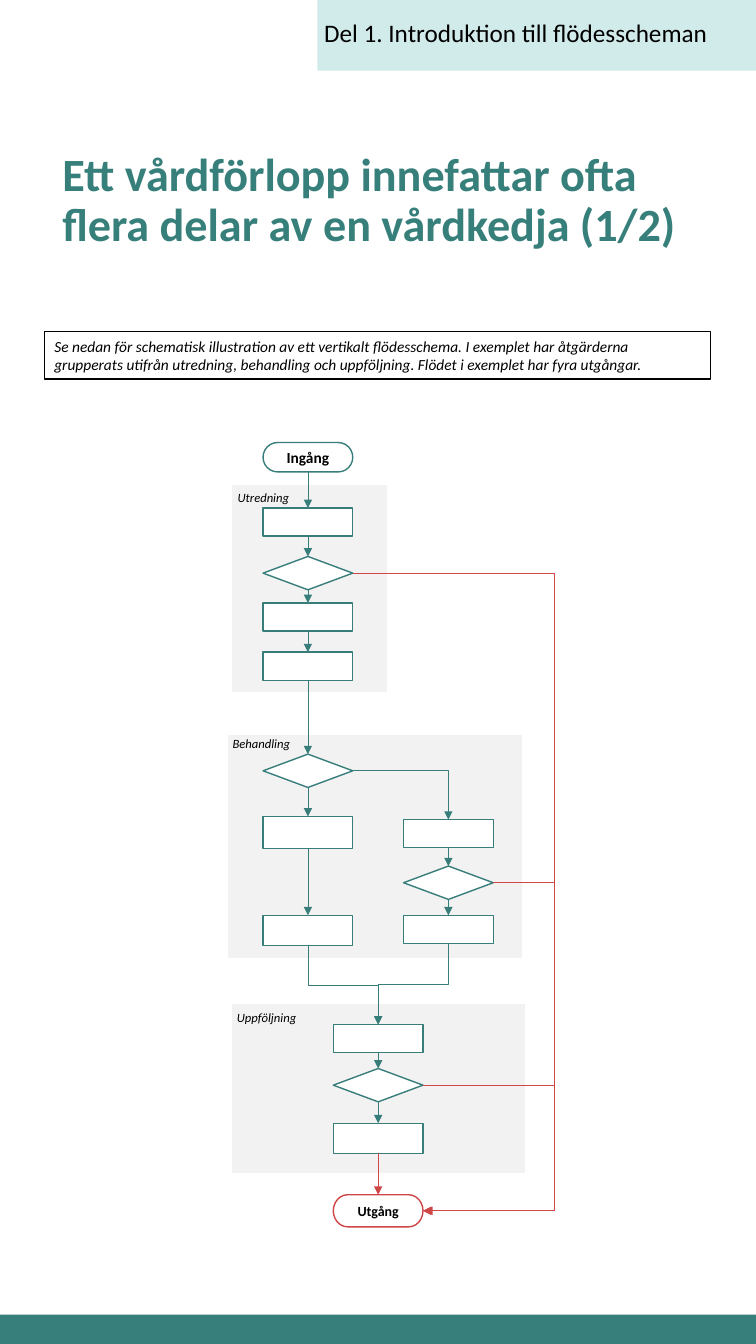
from dataclasses import dataclass

from lxml import etree
from pptx import Presentation
from pptx.dml.color import RGBColor
from pptx.enum.shapes import MSO_CONNECTOR, MSO_SHAPE
from pptx.enum.text import MSO_ANCHOR, MSO_AUTO_SIZE, PP_ALIGN
from pptx.oxml.ns import qn
from pptx.util import Cm, Pt

RECTANGLE = MSO_SHAPE.RECTANGLE
STEP = MSO_SHAPE.RECTANGLE
DECISION = MSO_SHAPE.FLOWCHART_DECISION
TERMINATOR = MSO_SHAPE.FLOWCHART_TERMINATOR
STRAIGHT = MSO_CONNECTOR.STRAIGHT
ELBOW = MSO_CONNECTOR.ELBOW
TOP, BOTTOM, RIGHT = 0, 2, 3  # connection sites


@dataclass(frozen=True)
class Theme:
    font: str = "Calibri"
    teal: str = "377F7A"
    flow: str = "377D7A"
    exit: str = "CF4646"
    mint: str = "D1EBEA"
    grey: str = "F2F2F2"
    white: str = "FFFFFF"
    black: str = "000000"
    title_size: float = 33
    header_size: float = 18
    body_size: float = 11
    exit_size: float = 10
    label_size: float = 9
    outline: float = 1
    thin: float = 0.75
    arrow: float = 0.5


THEME = Theme()

# Flowchart geometry in centimetres
NODE_WIDTH = 2.26
LEFT, SIDE = 7.76, 11.3
MIDDLE = (LEFT + SIDE) / 2
EXIT_RAIL = 13.97

# Group: left, top, width, height, label left, label top
GROUPS = {
    "Utredning": (5.84, 12.19, 3.94, 5.26, 5.74, 12.22),
    "Behandling": (5.74, 18.49, 7.44, 5.66, 5.61, 18.42),
    "Uppföljning": (5.82, 25.27, 7.42, 4.29, 5.72, 25.32),
}

# Node: shape, column centre, top, height
NODES = {
    "entry": (TERMINATOR, LEFT, 11.15, 0.74),
    "assess 1": (STEP, LEFT, 12.8, 0.71),
    "assess choice": (DECISION, LEFT, 14.02, 0.84),
    "assess 2": (STEP, LEFT, 15.19, 0.71),
    "assess 3": (STEP, LEFT, 16.43, 0.71),
    "treat choice": (DECISION, LEFT, 19, 0.84),
    "treat 1": (STEP, LEFT, 20.57, 0.81),
    "treat 2": (STEP, LEFT, 23.06, 0.76),
    "side 1": (STEP, SIDE, 20.65, 0.71),
    "side choice": (DECISION, SIDE, 21.82, 0.84),
    "side 2": (STEP, SIDE, 23.06, 0.71),
    "follow 1": (STEP, MIDDLE, 25.81, 0.71),
    "follow choice": (DECISION, MIDDLE, 26.92, 0.84),
    "follow 2": (STEP, MIDDLE, 28.3, 0.76),
    "exit": (TERMINATOR, MIDDLE, 30.1, 0.81),
}

# Nodes joined from top to bottom by straight arrows
CHAINS = [
    ["entry", "assess 1", "assess choice", "assess 2", "assess 3",
     "treat choice", "treat 1", "treat 2"],
    ["side 1", "side choice", "side 2"],
    ["follow 1", "follow choice", "follow 2", "exit"],
]


def color(value):
    return RGBColor.from_string(value)


def add_box(slide, box, fill=None, line=None, width=THEME.outline, kind=RECTANGLE):
    shape = slide.shapes.add_shape(kind, *map(Cm, box))
    shape.shadow.inherit = False
    if fill:
        shape.fill.solid()
        shape.fill.fore_color.rgb = color(fill)
    else:
        shape.fill.background()
    if line:
        shape.line.color.rgb = color(line)
        shape.line.width = Pt(width)
    else:
        shape.line.fill.background()
    return shape


def write(shape, text, size, ink=THEME.black, bold=False, italic=False,
          align=PP_ALIGN.LEFT, spacing=None, **frame_format):
    frame = shape.text_frame
    frame_values = {"word_wrap": True, "vertical_anchor": MSO_ANCHOR.TOP, **frame_format}
    for name, value in frame_values.items():
        setattr(frame, name, value)
    paragraph = frame.paragraphs[0]
    paragraph.text = text
    paragraph.alignment = align
    paragraph.line_spacing = spacing
    font_values = {"name": THEME.font, "size": Pt(size), "bold": bold, "italic": italic}
    for name, value in font_values.items():
        setattr(paragraph.runs[0].font, name, value)
    paragraph.runs[0].font.color.rgb = color(ink)


def add_text(slide, box, text, size, **text_format):
    write(slide.shapes.add_textbox(*map(Cm, box)), text, size, **text_format)


def add_node(slide, kind, center, top, height, line):
    box = (center - NODE_WIDTH / 2, top, NODE_WIDTH, height)
    return add_box(slide, box, THEME.white, line, kind=kind)


def add_arrow(slide, start, end, start_site=BOTTOM, end_site=TOP, kind=STRAIGHT,
              ink=THEME.flow):
    arrow = slide.shapes.add_connector(kind, 0, 0, 0, 0)
    arrow.begin_connect(start, start_site)
    arrow.end_connect(end, end_site)
    arrow.line.color.rgb = color(ink)
    arrow.line.width = Pt(THEME.arrow)
    properties = arrow.element.spPr
    etree.SubElement(properties.find(qn("a:ln")), qn("a:tailEnd"), type="triangle")
    etree.SubElement(properties, qn("a:effectLst"))
    return arrow


def add_corner_arrow(slide, start, end):
    arrow = add_arrow(slide, start, end, RIGHT, TOP, ELBOW)
    arrow.element.spPr.find(qn("a:prstGeom")).set("prst", "bentConnector2")


def add_merge_arrow(slide, start, end):
    """Elbow that leaves downwards: a quarter turn about its own centre."""
    arrow = add_arrow(slide, start, end, kind=ELBOW)
    leftwards = arrow.end_x < arrow.begin_x
    width, height = arrow.width, arrow.height
    arrow.left += (width - height) // 2
    arrow.top += (height - width) // 2
    arrow.width, arrow.height = height, width
    transform = arrow.element.spPr.find(qn("a:xfrm"))
    transform.set("rot", str((90 if leftwards else 270) * 60000))
    transform.set("flipH", "0" if leftwards else "1")


def add_exit_arrow(slide, start, end):
    """Elbow that runs out to the shared exit rail and back."""
    arrow = add_arrow(slide, start, end, RIGHT, RIGHT, ELBOW, THEME.exit)
    if arrow.width < Cm(0.03):
        arrow.end_x = arrow.begin_x + Cm(0.03)
    bend = (Cm(EXIT_RAIL) - arrow.begin_x) / (arrow.end_x - arrow.begin_x)
    guides = arrow.element.spPr.find(qn("a:prstGeom")).find(qn("a:avLst"))
    etree.SubElement(guides, qn("a:gd"), name="adj1", fmla=f"val {round(bend * 100000)}")


def add_page_texts(slide):
    add_box(slide, (0, 33.12, 19.05, 0.74), THEME.teal)
    add_box(slide, (8, 0, 11.05, 1.78), THEME.mint)
    add_text(slide, (7.92, 0.3, 11.13, 1.02), "Del 1. Introduktion till flödesscheman",
             THEME.header_size, auto_size=MSO_AUTO_SIZE.SHAPE_TO_FIT_TEXT)
    add_text(slide, (1.32, 1.8, 16.43, 6.55),
             "Ett vårdförlopp innefattar ofta flera delar av en vårdkedja (1/2)",
             THEME.title_size, ink=THEME.teal, bold=True, spacing=0.9,
             vertical_anchor=MSO_ANCHOR.MIDDLE)
    note = add_box(slide, (1.12, 8.36, 16.79, 1.19), line=THEME.black, width=THEME.thin)
    write(note, "Se nedan för schematisk illustration av ett vertikalt flödesschema. "
          "I exemplet har åtgärderna grupperats utifrån utredning, behandling och "
          "uppföljning. Flödet i exemplet har fyra utgångar.",
          THEME.body_size, italic=True)


def add_flowchart(slide):
    # Groups and their labels
    for label, (left, top, width, height, label_left, label_top) in GROUPS.items():
        add_box(slide, (left, top, width, height), THEME.grey, THEME.white)
        add_text(slide, (label_left, label_top, 2.51, 0.63), label,
                 THEME.label_size, italic=True)

    # Nodes
    nodes = {name: add_node(slide, *node, THEME.exit if name == "exit" else THEME.flow)
             for name, node in NODES.items()}
    for name, text, size in (("entry", "Ingång", THEME.body_size),
                             ("exit", "Utgång", THEME.exit_size)):
        write(nodes[name], text, size, bold=True, align=PP_ALIGN.CENTER,
              vertical_anchor=MSO_ANCHOR.MIDDLE, margin_left=0, margin_right=0,
              margin_top=0, margin_bottom=0)

    # Arrows
    for chain in CHAINS:
        for start, end in zip(chain, chain[1:]):
            ink = THEME.exit if end == "exit" else THEME.flow
            add_arrow(slide, nodes[start], nodes[end], ink=ink)
    add_corner_arrow(slide, nodes["treat choice"], nodes["side 1"])
    for start in ("treat 2", "side 2"):
        add_merge_arrow(slide, nodes[start], nodes["follow 1"])
    for start in ("assess choice", "side choice", "follow choice"):
        add_exit_arrow(slide, nodes[start], nodes["exit"])


def main():
    presentation = Presentation()
    presentation.slide_width, presentation.slide_height = Cm(19.05), Cm(33.86)
    slide = presentation.slides.add_slide(presentation.slide_layouts[6])
    add_page_texts(slide)
    add_flowchart(slide)
    presentation.save("out.pptx")


if __name__ == "__main__":
    main()
